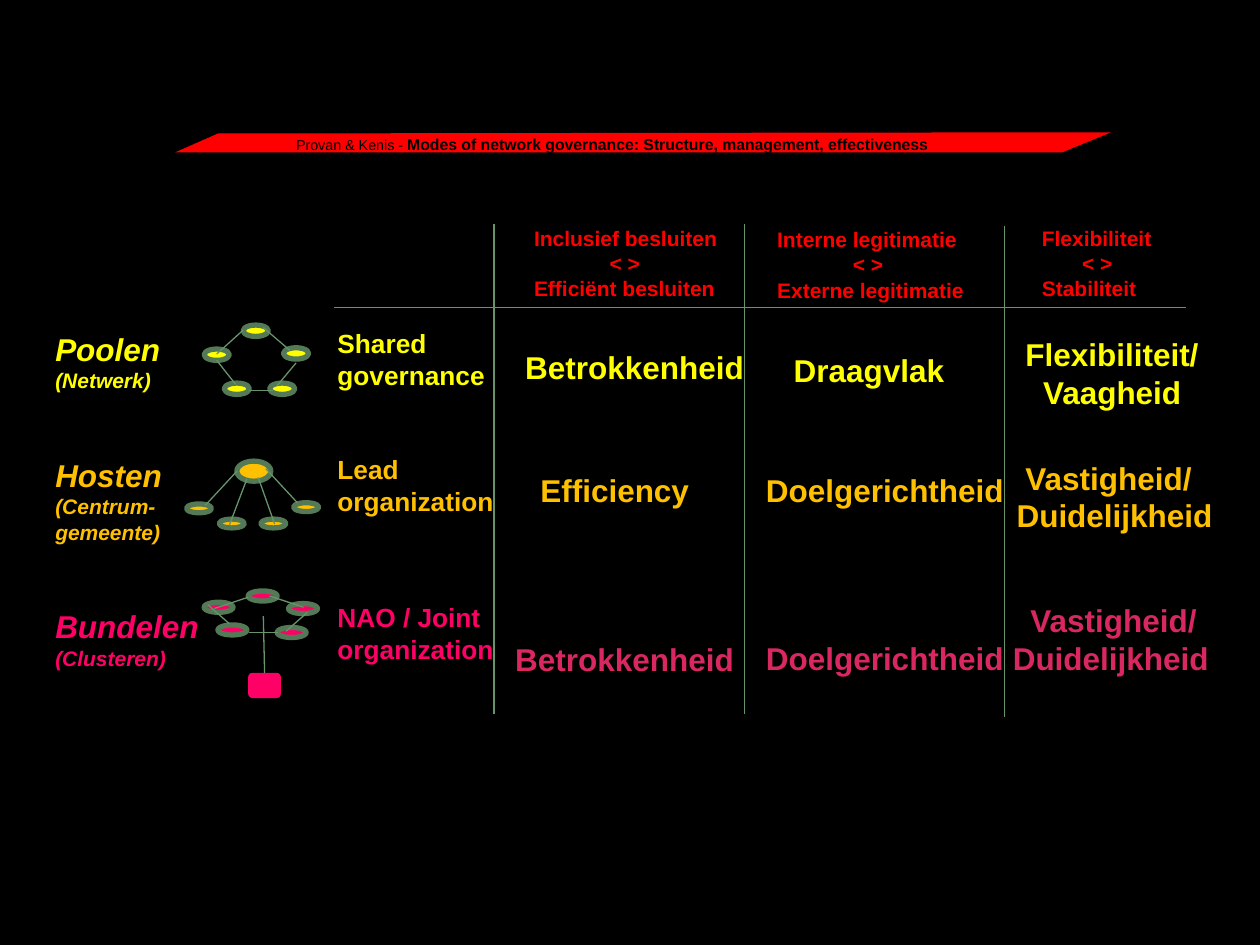
from dataclasses import dataclass

from lxml import etree
from pptx import Presentation
from pptx import util as u
from pptx.dml.color import RGBColor
from pptx.enum import shapes, text
from pptx.oxml.ns import qn


@dataclass(frozen=True)
class Theme:
    """Colours, type sizes and line widths of the slide."""
    font: str = "Arial"
    background: str = "000000"
    banner: str = "FF0000"
    pool: str = "FFFF00"
    host: str = "FFC000"
    bundle: str = "FF0066"
    bundle_cell: str = "D92760"
    rule: str = "67946B"
    ring: str = "547957"
    large: float = 18
    medium: float = 15
    small: float = 12
    title: float = 9
    author: float = 8.2
    leading: float = 1.2
    inset: float = 0.1


@dataclass(frozen=True)
class Line:
    """One line of text with its colour, size, indent and space before."""
    words: str
    color: str
    size: float
    indent: float = 0
    before: float = 0
    italic: bool = False


THEME = Theme()
COLUMNS = (3.92, 5.91, 7.97)
ROWS = (2.61, 3.59, 4.72)


def paint(fill, color):
    """Give a fill one solid colour."""
    fill.solid()
    fill.fore_color.rgb = RGBColor.from_string(color)


def add_run(paragraph, words, size, color, bold=True, italic=False):
    """Add one formatted run to a paragraph."""
    run = paragraph.add_run()
    run.text = words
    run.font.name = THEME.font
    run.font.size = u.Pt(size)
    run.font.bold = bold
    run.font.italic = italic
    run.font.color.rgb = RGBColor.from_string(color)


def prepare_frame(shape):
    """Set the wrapping, anchor and insets of a text frame."""
    frame = shape.text_frame
    frame.word_wrap = True
    frame.auto_size = text.MSO_AUTO_SIZE.NONE
    frame.vertical_anchor = text.MSO_ANCHOR.TOP
    frame.margin_left, frame.margin_right = u.Inches(THEME.inset), 0
    frame.margin_top = frame.margin_bottom = u.Inches(THEME.inset / 2)
    return frame


def add_lines(slide, box, lines):
    """Place a text box holding one paragraph for each line."""
    frame = prepare_frame(slide.shapes.add_textbox(*map(u.Inches, box)))
    for index, line in enumerate(lines):
        paragraph = frame.add_paragraph() if index else frame.paragraphs[0]
        paragraph.line_spacing = u.Pt(line.size * THEME.leading)
        paragraph.space_before = u.Pt(line.before)
        properties = paragraph._p.get_or_add_pPr()
        properties.set("marL", str(u.Inches(line.indent)))
        properties.set("indent", "0")
        add_run(paragraph, line.words, line.size, line.color, italic=line.italic)


def add_rule(parent, start, end):
    """Draw a thin straight connector between two points."""
    connector = parent.shapes.add_connector(
        shapes.MSO_CONNECTOR.STRAIGHT, *map(u.Inches, (*start, *end)))
    connector.line.color.rgb = RGBColor.from_string(THEME.rule)
    connector.line.width = u.Pt(0.75)
    etree.SubElement(connector._element.spPr, qn("a:effectLst"))
    return connector


def add_solid(parent, kind, box, color, ring=False):
    """Draw a filled preset shape, with a thick ring if asked."""
    shape = parent.shapes.add_shape(kind, *map(u.Inches, box))
    shape.shadow.inherit = False
    paint(shape.fill, color)
    if ring:
        shape.line.color.rgb = RGBColor.from_string(THEME.ring)
        shape.line.width = u.Pt(3)
    else:
        shape.line.fill.background()
    return shape


def add_network(slide, origin, color, nodes, links):
    """Draw grouped nodes and links, measured from the network's corner."""
    left, top = origin
    group = slide.shapes.add_group_shape()
    for x, y, width, height in nodes:
        add_solid(group, shapes.MSO_SHAPE.OVAL,
                  (left + x, top + y, width, height), color, ring=True)
    for x1, y1, x2, y2 in links:
        add_rule(group, (left + x1, top + y1), (left + x2, top + y2))
    return group


def add_banner(slide, box):
    """Draw the slanted banner and put the title over it."""
    left, top, width, height = box
    corners = [(left, top + height), (left + 0.34, top + 0.01),
               (left + width, top), (left + width - 0.39, top + height)]
    points = [(u.Inches(x), u.Inches(y)) for x, y in corners]
    builder = slide.shapes.build_freeform(*points[0])
    builder.add_line_segments(points[1:], close=True)
    banner = builder.convert_to_shape()
    banner.shadow.inherit = False
    paint(banner.fill, THEME.banner)
    banner.line.fill.background()

    title = slide.shapes.title
    title.left, title.top = u.Inches(left + 0.86), u.Inches(top - 0.03)
    title.width, title.height = u.Inches(5.28), u.Inches(0.25)
    paragraph = prepare_frame(title).paragraphs[0]
    paragraph.alignment = text.PP_ALIGN.LEFT
    paragraph.line_spacing = u.Pt(THEME.title * THEME.leading)
    add_run(paragraph, "Provan & Kenis - ", THEME.author, THEME.background, bold=False)
    add_run(paragraph, "Modes of network governance: Structure, management, effectiveness",
            THEME.title, THEME.background)
    banner._element.addnext(title._element)


def add_grid(slide, top, bottom):
    """Draw the column rules and the rule under the headings."""
    for x, shift in zip(COLUMNS, (0, 0, 0.01)):
        add_rule(slide, (x, top + shift), (x, bottom + shift * 2))
    add_rule(slide, (9.41, top + 0.66), (2.65, top + 0.66))


def add_headings(slide, top):
    """Write the three pairs of opposites above the columns."""
    headings = [
        (0.22, 0, 1.67, 0.6, "Inclusief besluiten", "Efficiënt besluiten"),
        (0.16, 0.01, 1.7, 0.6, "Interne legitimatie", "Externe legitimatie"),
        (0.2, 0, 1.08, 0.32, "Flexibiliteit", "Stabiliteit"),
    ]
    for x, (dx, dy, width, indent, first, second) in zip(COLUMNS, headings):
        pairs = ((first, 0), ("< >", indent), (second, 0))
        add_lines(slide, (x + dx, top + dy, width, 0.71),
                  [Line(words, THEME.banner, THEME.small, shift) for words, shift in pairs])


def add_row(slide, top, color, cells):
    """Write one row of effects, each cell offset from its column."""
    for x, (dx, dy, width, *lines) in zip(COLUMNS, cells):
        add_lines(slide, (x + dx, top + dy, width, 0.1 + 0.3 * len(lines)),
                  [Line(words, color, THEME.large, indent) for words, indent in lines])


def add_labels(slide, box):
    """Write the names of the three forms down the left side."""
    entries = [(THEME.pool, 0, "Poolen", "(Netwerk)"),
               (THEME.host, 36, "Hosten", "(Centrum-", "gemeente)"),
               (THEME.bundle, 36, "Bundelen", "(Clusteren)")]
    lines = []
    for color, gap, name, *details in entries:
        lines.append(Line(name, color, THEME.large, before=gap, italic=True))
        lines += [Line(words, color, THEME.small, italic=True) for words in details]
    add_lines(slide, box, lines)


def add_modes(slide, box):
    """Write the three governance modes beside the networks."""
    entries = [(THEME.pool, 0, "Shared", "governance"),
               (THEME.host, 36, "Lead", "organization"),
               (THEME.bundle, 48.6, "NAO / Joint", "organization")]
    lines = []
    for color, gap, first, second in entries:
        lines += [Line(first, color, THEME.medium, before=gap),
                  Line(second, color, THEME.medium)]
    add_lines(slide, box, lines)


def add_networks(slide, left):
    """Draw the pooled, hosted and bundled networks."""
    add_network(
        slide, (left + 0.14, 2.58), THEME.pool,
        [(x, y, 0.2, 0.09) for x, y in
         ((0.31, 0), (0.63, 0.18), (0.16, 0.46), (0.52, 0.46), (0, 0.19))],
        [(0.36, 0.52, 0.55, 0.52), (0.1, 0.23, 0.31, 0.04), (0.58, 0.48, 0.73, 0.3),
         (0.1, 0.28, 0.25, 0.47), (0.47, 0.02, 0.68, 0.2)])
    add_network(
        slide, (left, 3.66), THEME.host,
        [(0.4, 0, 0.27, 0.16)] + [(x, y, 0.2, 0.07) for x, y in
                                  ((0.85, 0.33), (0.26, 0.46), (0.59, 0.46), (0, 0.34))],
        [(0.15, 0.35, 0.4, 0.08), (0.63, 0.06, 0.88, 0.33),
         (0.34, 0.51, 0.48, 0.14), (0.57, 0.13, 0.7, 0.5)])
    bundle = add_network(
        slide, (left + 0.14, 4.69), THEME.bundle,
        [(x, y, 0.23, 0.08) for x, y in
         ((0.35, 0), (0.67, 0.1), (0.11, 0.27), (0.58, 0.29), (0, 0.09))],
        [(0.36, 0.33, 0.59, 0.33), (0.65, 0.32, 0.82, 0.17), (0.03, 0.11, 0.2, 0.26),
         (0.52, 0.04, 0.79, 0.13), (0.08, 0.14, 0.35, 0.05)])
    office = add_solid(bundle, shapes.MSO_SHAPE.ROUNDED_RECTANGLE,
                       (left + 0.49, 5.34, 0.26, 0.2), THEME.bundle)
    stem = add_rule(bundle, (left + 0.61, 4.89), (left + 0.62, 5.34))
    stem.end_connect(office, 0)


def main():
    """Build and save the slide."""
    presentation = Presentation()
    presentation.slide_width, presentation.slide_height = u.Inches(10), u.Inches(7.5)
    slide = presentation.slides.add_slide(presentation.slide_layouts[5])
    paint(slide.background.fill, THEME.background)
    add_grid(slide, 1.78, 5.67)
    add_headings(slide, 1.74)
    add_row(slide, ROWS[0], THEME.pool, [
        (0.08, 0.1, 2.1, ("Betrokkenheid", 0.07)),
        (0.22, 0.13, 1.55, ("Draagvlak", 0.07)),
        (0, 0, 1.66, ("Flexibiliteit/", 0.07), ("Vaagheid", 0.21))])
    add_row(slide, ROWS[1], THEME.host, [
        (0.27, 0.1, 1.39, ("Efficiency", 0)),
        (0, 0.1, 2.25, ("Doelgerichtheid", 0.07)),
        (0, 0, 1.84, ("Vastigheid/", 0.07), ("Duidelijkheid", 0))])
    add_row(slide, ROWS[2], THEME.bundle_cell, [
        (0, 0.31, 2.03, ("Betrokkenheid", 0.07)),
        (0, 0.3, 2.18, ("Doelgerichtheid", 0.07)),
        (-0.03, 0, 1.77, ("Vastigheid/", 0.14), ("Duidelijkheid", 0))])
    add_banner(slide, (1.39, 1.05, 7.43, 0.16))
    add_labels(slide, (0.34, 2.57, 1.35, 3.05))
    add_modes(slide, (2.58, 2.55, 1.45, 3.03))
    add_networks(slide, 1.48)
    presentation.save("out.pptx")


if __name__ == "__main__":
    main()
